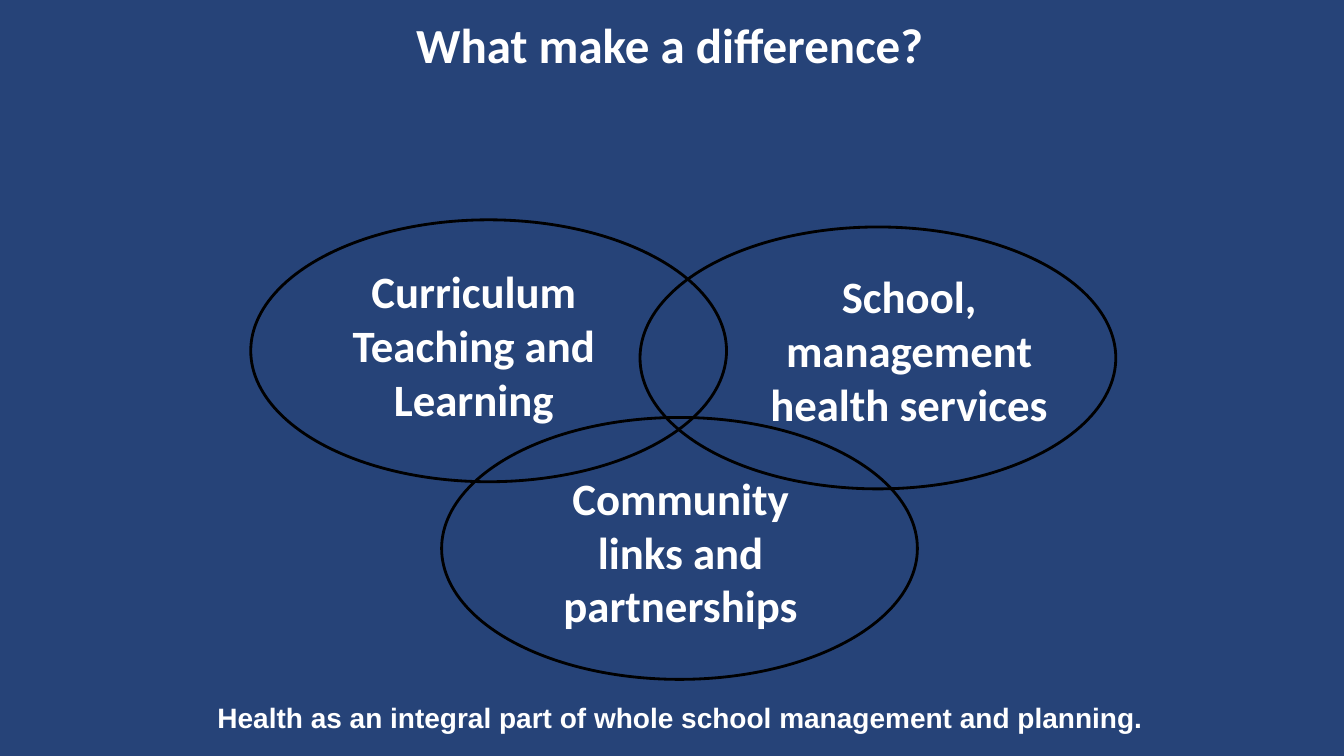
import pptx
import pptx.util
import pptx.dml.color
import pptx.enum.shapes
import pptx.enum.text

Cm = pptx.util.Cm
Pt = pptx.util.Pt

COLORS = {"background": "264378", "text": "FFFFFF", "outline": "000000"}
OVAL_SIZE = (11.99, 6.6)
LABEL_HEIGHT = 4.37

TITLE = {"text": "What make a difference?", "box": (5.94, 0.41, 21.89, 3.68),
         "font": "Calibri", "size": 35}
FOOTER = {"text": "Health as an integral part of whole school management and planning.",
          "box": (5.13, 17.53, 24.03, 1.12), "font": "Arial", "size": 20}
FACTORS = [
    {"text": "Curriculum Teaching and Learning",
     "oval": (6.32, 5.54), "label": (7.92, 6.53), "width": 8.05},
    {"text": "School, management health services",
     "oval": (16.13, 5.72), "label": (18.47, 6.65), "width": 8.89},
    {"text": "Community links and partnerships",
     "oval": (11.13, 10.52), "label": (13.13, 11.73), "width": 8.05},
]


def color(name):
    """Return the palette colour with this name."""
    return pptx.dml.color.RGBColor.from_string(COLORS[name])


def add_text(shapes, text, box, font, size, wrap=True, spacing=None):
    """Add bold, centred text in a box given in centimetres."""
    frame = shapes.add_textbox(*map(Cm, box)).text_frame
    frame.word_wrap = wrap
    frame.vertical_anchor = pptx.enum.text.MSO_ANCHOR.TOP
    line = frame.paragraphs[0]
    line.text = text
    line.alignment = pptx.enum.text.PP_ALIGN.CENTER
    if spacing:
        line.line_spacing = spacing
    style = line.runs[0].font
    style.name, style.size, style.bold = font, Pt(size), True
    style.color.rgb = color("text")


def add_factor(slide, factor):
    """Add one oval of the diagram together with its label."""
    group = slide.shapes.add_group_shape()
    add_text(group.shapes, factor["text"],
             (*factor["label"], factor["width"], LABEL_HEIGHT), "Calibri", 32)
    oval = group.shapes.add_shape(pptx.enum.shapes.MSO_SHAPE.OVAL,
                                  *map(Cm, factor["oval"] + OVAL_SIZE))
    oval.shadow.inherit = False
    oval.fill.background()
    oval.line.color.rgb = color("outline")
    oval.line.width = Pt(2)


def main():
    """Build the slide and save it."""
    deck = pptx.Presentation()
    deck.slide_width, deck.slide_height = Cm(33.87), Cm(19.05)
    slide = deck.slides.add_slide(deck.slide_layouts[6])
    slide.background.fill.solid()
    slide.background.fill.fore_color.rgb = color("background")
    add_text(slide.shapes, **FOOTER, wrap=False)
    for factor in FACTORS:
        add_factor(slide, factor)
    add_text(slide.shapes, **TITLE, spacing=0.9)
    deck.save("out.pptx")


if __name__ == "__main__":
    main()
